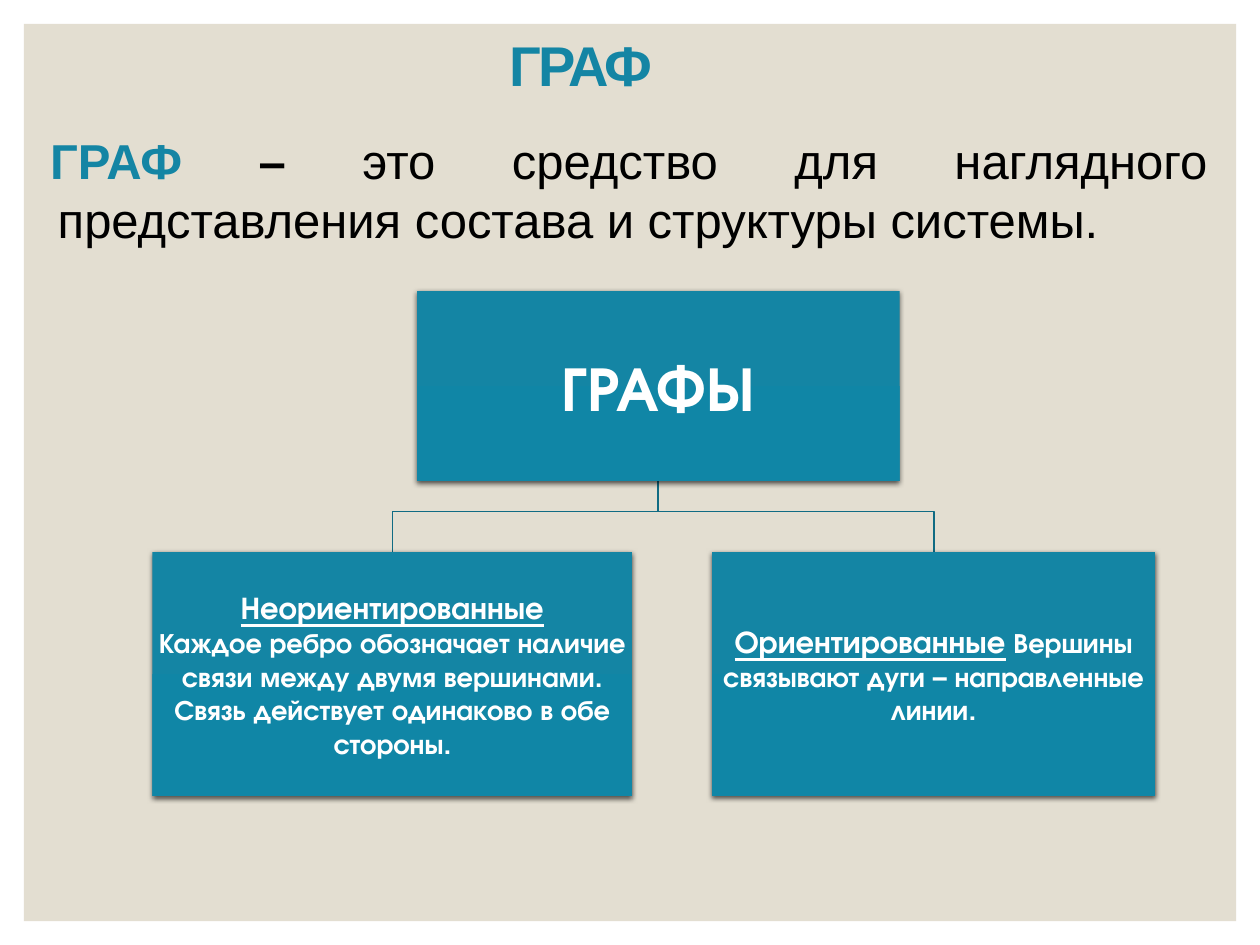
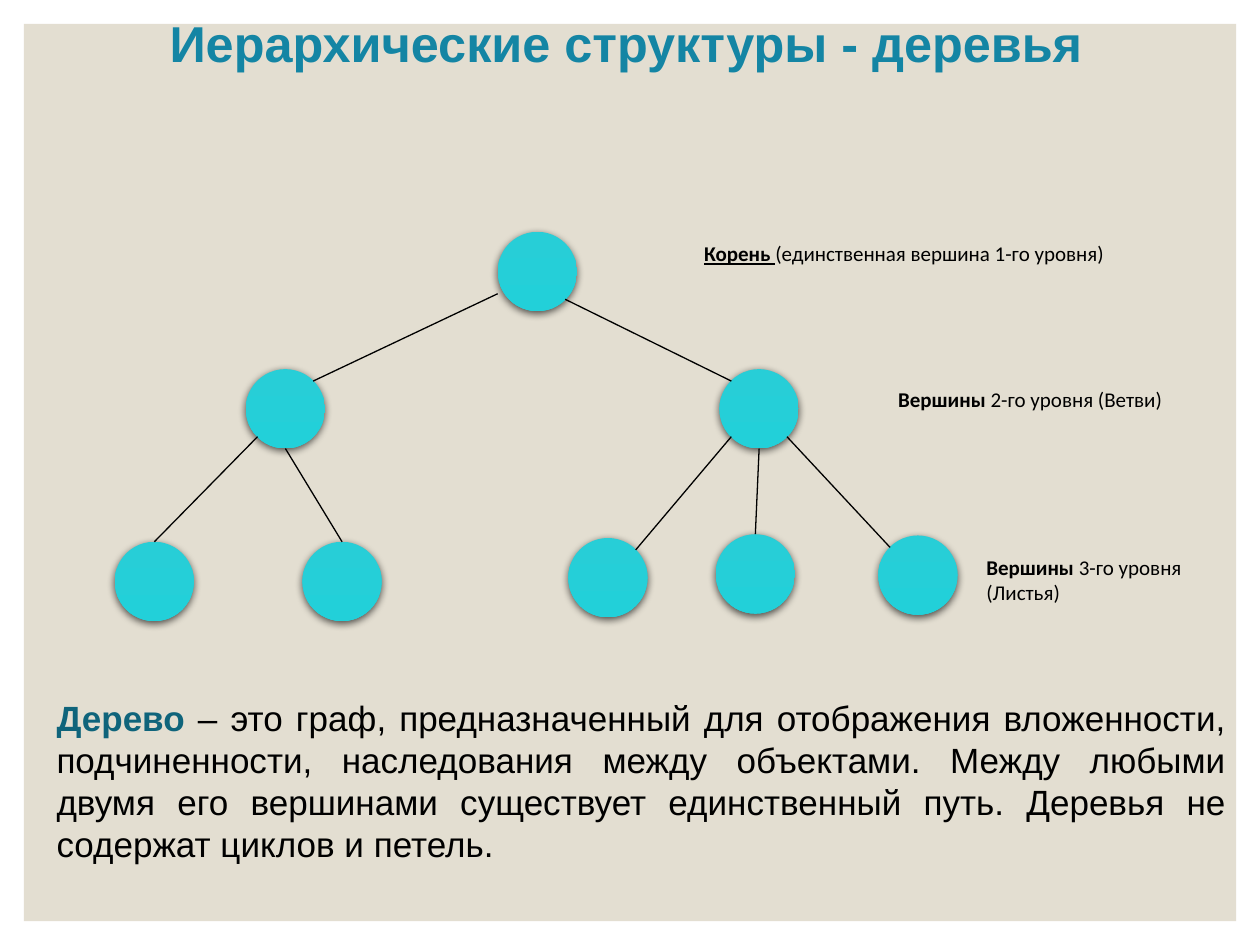
import pptx
import pptx.dml.color
import pptx.enum.shapes
import pptx.enum.text
import pptx.oxml
import pptx.oxml.ns
import pptx.util

Inches = pptx.util.Inches
Pt = pptx.util.Pt
ALIGN = pptx.enum.text.PP_ALIGN
ANCHOR = pptx.enum.text.MSO_ANCHOR
SHAPE = pptx.enum.shapes.MSO_SHAPE

TEAL = "1485A4"
TEAL_GRADIENT = (TEAL, "1086A6")
AQUA_GRADIENT = ("27CED7", "22D0D9")
PANEL_BOX = (0.19, 0.19, 9.62, 7.12)

HEADING = {"name": "Arial", "bold": True, "color": TEAL}
BOX_TEXT = {"name": "TeX Gyre Adventor", "size": Pt(16), "bold": True, "color": "FFFFFF"}
BOX_TERM = BOX_TEXT | {"size": Pt(18), "underline": True}
LABEL_TEXT = {"name": "Calibri", "size": Pt(12), "color": "000000"}
LABEL_TERM = LABEL_TEXT | {"bold": True}

NODE_SIZE = 0.63
SITES = {
    "top": (0.5, 0), "bottom": (0.5, 1), "left": (0, 0.78),
    "top left": (0.15, 0.15), "top right": (0.85, 0.15),
    "bottom left": (0.15, 0.85), "bottom right": (0.85, 0.85),
}
NODES = {
    "root": (3.04, 0), "left branch": (1.04, 1.09), "right branch": (4.8, 1.09),
    "leaf 1": (0, 2.46), "leaf 2": (1.49, 2.46), "leaf 3": (3.6, 2.43),
    "leaf 4": (4.77, 2.4), "leaf 5": (6.06, 2.41),
}
EDGES = [
    ("root", "left", "left branch", "top right"),
    ("root", "bottom right", "right branch", "top left"),
    ("left branch", "bottom left", "leaf 1", "top"),
    ("left branch", "bottom", "leaf 2", "top"),
    ("right branch", "bottom left", "leaf 3", "top right"),
    ("right branch", "bottom", "leaf 4", "top"),
    ("right branch", "bottom right", "leaf 5", "top left"),
]
LEVEL_LABELS = [
    ((4.58, 0.02, 3.43, 0.38),
     [("Корень ", LABEL_TERM | {"underline": True}),
      ("(единственная вершина 1-го уровня)", LABEL_TEXT)]),
    ((6.12, 1.18, 2.3, 0.45),
     [("Вершины", LABEL_TERM), (" 2-го уровня (Ветви)", LABEL_TEXT)]),
    ((6.82, 2.51, 2.1, 0.43),
     [("Вершины", LABEL_TERM), (" 3-го уровня (Листья)", LABEL_TEXT)]),
]


def rgb(color):
    return pptx.dml.color.RGBColor.from_string(color)


def inches(values):
    return [Inches(value) for value in values]


def write(frame, paragraphs, inset=None, **paragraph_format):
    frame.word_wrap = True
    if inset is not None:
        for side in ("left", "top", "right", "bottom"):
            setattr(frame, f"margin_{side}", Inches(inset))
    for number, runs in enumerate(paragraphs):
        paragraph = frame.add_paragraph() if number else frame.paragraphs[0]
        for key, value in paragraph_format.items():
            setattr(paragraph, key, value)
        for text, style in runs:
            run = paragraph.add_run()
            run.text = text
            for key, value in style.items():
                if key == "color":
                    run.font.color.rgb = rgb(value)
                else:
                    setattr(run.font, key, value)


def add_text(slide, box, runs, **paragraph_format):
    frame = slide.shapes.add_textbox(*inches(box)).text_frame
    write(frame, [runs], **paragraph_format)
    return frame


def set_title(slide, box, text, size, anchor, **paragraph_format):
    title = slide.shapes.title
    title.left, title.top, title.width, title.height = inches(box)
    frame = title.text_frame
    frame.auto_size = pptx.enum.text.MSO_AUTO_SIZE.NONE
    frame.vertical_anchor = anchor
    write(frame, [[(text, HEADING | {"size": Pt(size)})]],
          alignment=ALIGN.CENTER, **paragraph_format)
    return frame


def add_raised(slide, kind, box, gradient, blur, distance):
    raised = slide.shapes.add_shape(kind, *inches(box))
    raised.line.fill.background()
    raised.fill.gradient()
    raised.fill.gradient_angle = 270
    for stop, color in zip(raised.fill.gradient_stops, gradient):
        stop.color.rgb = rgb(color)
    raised.element.spPr.append(pptx.oxml.parse_xml(
        f'<a:effectLst {pptx.oxml.ns.nsdecls("a")}>'
        f'<a:outerShdw blurRad="{Pt(blur)}" dist="{Pt(distance)}" dir="5400000" rotWithShape="0">'
        '<a:srgbClr val="000000"><a:alpha val="63000"/></a:srgbClr>'
        '</a:outerShdw></a:effectLst>'))
    return raised


def add_panel(prs, slide):
    panel = slide.shapes.add_shape(SHAPE.RECTANGLE, *inches(PANEL_BOX))
    panel.shadow.inherit = False
    panel.fill.solid()
    panel.fill.fore_color.rgb = rgb("E3DED1")
    panel.line.fill.background()
    prs.slide_master.shapes.element.insert(2, panel.element)


def add_branch(slide, start, end, bend):
    (x1, y1), (x2, y2) = inches(start), inches(end)
    turn = Inches(bend)
    builder = slide.shapes.build_freeform(x1, y1)
    builder.add_line_segments([(x1, turn), (x2, turn), (x2, y2)], close=False)
    branch = builder.convert_to_shape()
    branch.shadow.inherit = False
    branch.fill.background()
    branch.line.color.rgb = rgb("106B83")
    branch.line.width = Pt(1)


def add_graph_kinds(slide, left, top):
    root_box = (left + 2.1, top, 3.83, 1.51)
    kinds = [
        ((left, top + 2.07, 3.81, 1.94),
         [[("Неориентированные", BOX_TERM)],
          [("Каждое ребро обозначает наличие связи между двумя вершинами.", BOX_TEXT)],
          [("Связь действует одинаково в обе стороны.", BOX_TEXT)]]),
        ((left + 4.44, top + 2.07, 3.52, 1.94),
         [[("Ориентированные", BOX_TERM),
           (" Вершины связывают дуги – направленные линии.", BOX_TEXT)]]),
    ]
    root_foot = (root_box[0] + root_box[2] / 2, top + root_box[3])
    for box, _ in kinds:
        add_branch(slide, root_foot, (box[0] + box[2] / 2, box[1]), top + 1.75)
    root_text = [[("ГРАФЫ", BOX_TEXT | {"size": Pt(36)})]]
    for box, paragraphs in [(root_box, root_text), *kinds]:
        card = add_raised(slide, SHAPE.RECTANGLE, box, TEAL_GRADIENT, 3, 1)
        card.text_frame.vertical_anchor = ANCHOR.MIDDLE
        write(card.text_frame, paragraphs, inset=0.01, alignment=ALIGN.CENTER)


def add_tree(slide, left, top):
    def site(node, place):
        return [Inches(origin + offset + NODE_SIZE * share)
                for origin, offset, share in zip((left, top), NODES[node], SITES[place])]

    for x, y in NODES.values():
        add_raised(slide, SHAPE.OVAL, (left + x, top + y, NODE_SIZE, NODE_SIZE),
                   AQUA_GRADIENT, 4.5, 1.5)
    for (x, y, width, height), runs in LEVEL_LABELS:
        add_text(slide, (left + x, top + y, width, height), runs, space_after=Pt(10))
    for parent, parent_site, child, child_site in EDGES:
        edge = slide.shapes.add_connector(
            pptx.enum.shapes.MSO_CONNECTOR.STRAIGHT,
            *site(parent, parent_site), *site(child, child_site))
        edge.line.color.rgb = rgb("000000")
        edge.line.width = Pt(0.75)
        edge.element.spPr.append(pptx.oxml.parse_xml(
            f'<a:effectLst {pptx.oxml.ns.nsdecls("a")}/>'))


def build_graph_slide(slide):
    title = set_title(slide, (1.07, 0.19, 7.08, 0.64), "ГРАФ", 32, ANCHOR.TOP)
    title.paragraphs[0].runs[0].font._element.set("spc", "-150")
    term = HEADING | {"size": Pt(28)}
    dash = term | {"color": "000000"}
    definition = add_text(slide, (0.2, 0.99, 9.48, 1.04), [
        ("ГРАФ ", term),
        ("– ", dash),
        ("это средство для наглядного представления состава и структуры системы.",
         dash | {"bold": False}),
    ], alignment=ALIGN.JUSTIFY)
    indents = {"marL": 0.16, "indent": -0.06}
    for key, value in indents.items():
        definition.paragraphs[0]._p.get_or_add_pPr().set(key, str(Inches(value)))
    add_graph_kinds(slide, 1.21, 2.31)


def build_tree_slide(slide):
    set_title(slide, (1.04, 0.13, 7.86, 0.48), "Иерархические структуры - деревья",
              28.8, ANCHOR.MIDDLE, line_spacing=0.9)
    term = HEADING | {"size": Pt(20), "color": "0F647B"}
    add_text(slide, (0.35, 5.48, 9.48, 1.45), [
        ("Дерево ", term),
        ("– это граф, предназначенный для отображения вложенности, подчиненности, "
         "наследования между объектами. Между любыми двумя его вершинами существует "
         "единственный путь. Деревья не содержат циклов и петель.",
         term | {"color": "000000", "bold": False}),
    ], alignment=ALIGN.JUSTIFY)
    add_tree(slide, 0.91, 1.84)


def main():
    prs = pptx.Presentation()
    prs.slide_width, prs.slide_height = inches((10, 7.5))
    title_only = prs.slide_layouts[5]
    graph_slide, tree_slide = (prs.slides.add_slide(title_only) for _ in range(2))
    add_panel(prs, graph_slide)
    build_graph_slide(graph_slide)
    build_tree_slide(tree_slide)
    prs.save("out.pptx")


if __name__ == "__main__":
    main()
